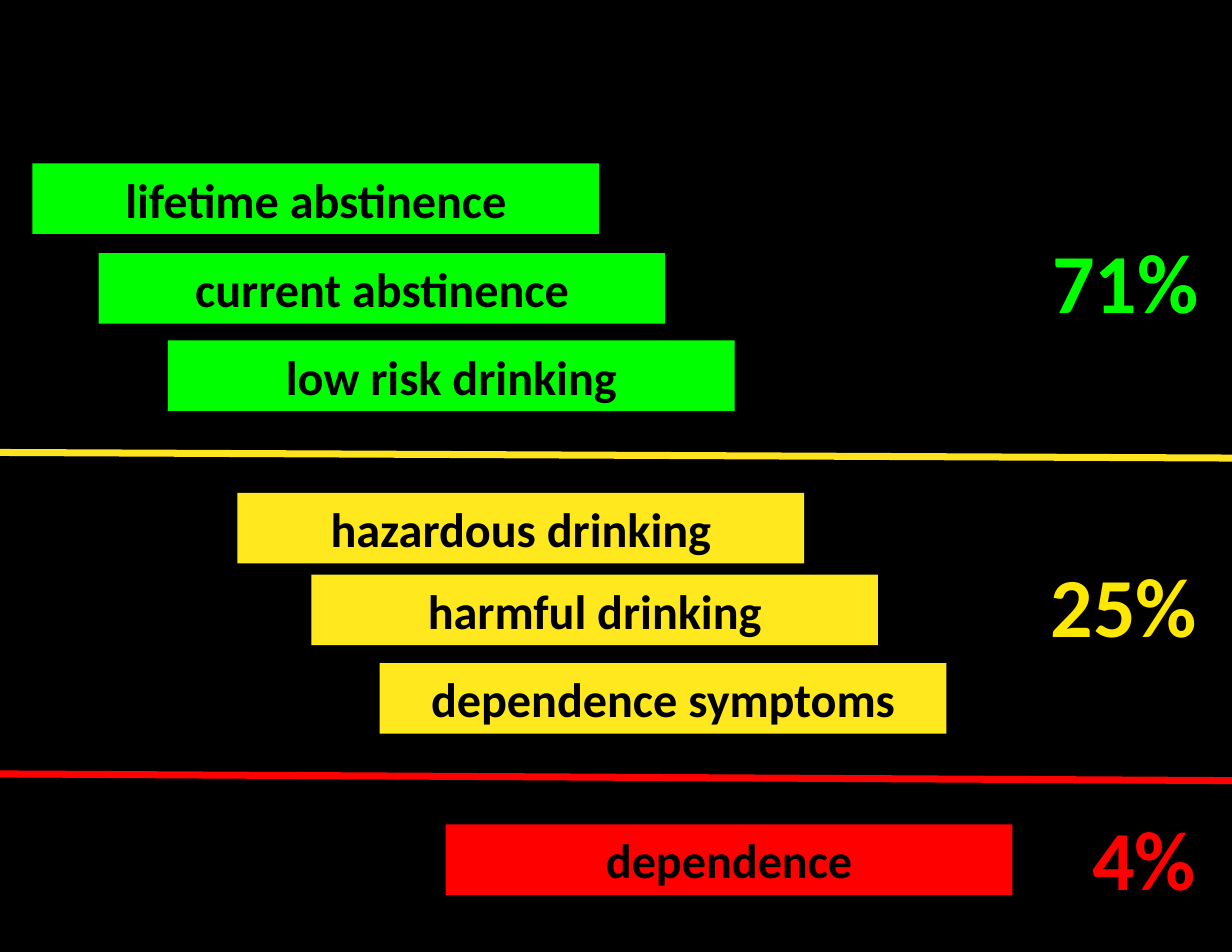
from lxml import etree
from pptx import Presentation
from pptx.dml.color import RGBColor
from pptx.enum import shapes, text
from pptx.oxml.ns import qn
from pptx.util import Inches, Pt

COLORS = {
    "background": "000000",
    "green": "00FF00",
    "yellow": "FFE81E",
    "yellow_line": "FEE31E",
    "yellow_share": "FFE800",
    "red": "FF0000",
}
LEVELS = [
    ("lifetime abstinence", 0.29, 1.46, "green"),
    ("current abstinence", 0.88, 2.26, "green"),
    ("low risk drinking", 1.5, 3.04, "green"),
    ("hazardous drinking", 2.12, 4.4, "yellow"),
    ("harmful drinking", 2.78, 5.13, "yellow"),
    ("dependence symptoms", 3.39, 5.92, "yellow"),
    ("dependence", 3.98, 7.36, "red"),
]
SHARES = [
    ("71%", 9.1, 1.99, "green"),
    ("25%", 9.09, 4.88, "yellow_share"),
    ("4%", 9.08, 7.14, "red"),
]
DIVIDERS = [(4.04, 4.09, "yellow_line"), (6.91, 6.97, "red")]
SLIDE_WIDTH, SLIDE_HEIGHT = 11, 8.5
BAR_SIZE = (5.06, 0.63)
SHARE_SIZE = (1.71, 1.02)


def color(name):
    return RGBColor.from_string(COLORS[name])


def write_text(shape, content, size, color_name, align, anchor):
    frame = shape.text_frame
    frame.word_wrap = True
    frame.vertical_anchor = anchor
    frame.margin_left = frame.margin_right = Inches(0.11)
    frame.margin_top = frame.margin_bottom = Inches(0.06)
    paragraph = frame.paragraphs[0]
    paragraph.alignment = align
    run = paragraph.add_run()
    run.text = content
    run.font.name = "Calibri"
    run.font.size = Pt(size)
    run.font.bold = True
    run.font.color.rgb = color(color_name)


def add_level(slide, label, left, top, fill):
    bar = slide.shapes.add_shape(
        shapes.MSO_SHAPE.RECTANGLE, *map(Inches, (left, top, *BAR_SIZE)))
    bar.shadow.inherit = False
    bar.fill.solid()
    bar.fill.fore_color.rgb = color(fill)
    bar.line.fill.background()
    write_text(bar, label, size=31, color_name="background",
               align=text.PP_ALIGN.CENTER, anchor=text.MSO_ANCHOR.MIDDLE)


def add_share(slide, label, left, top, color_name):
    box = slide.shapes.add_textbox(*map(Inches, (left, top, *SHARE_SIZE)))
    write_text(box, label, size=54, color_name=color_name,
               align=text.PP_ALIGN.RIGHT, anchor=text.MSO_ANCHOR.TOP)


def add_divider(slide, start, end, color_name):
    line = slide.shapes.add_connector(
        shapes.MSO_CONNECTOR.STRAIGHT,
        *map(Inches, (0, start, SLIDE_WIDTH, end)))
    line.line.color.rgb = color(color_name)
    line.line.width = Pt(4.5)
    etree.SubElement(line._element.spPr, qn("a:effectLst"))


def main():
    presentation = Presentation()
    presentation.slide_width = Inches(SLIDE_WIDTH)
    presentation.slide_height = Inches(SLIDE_HEIGHT)
    slide = presentation.slides.add_slide(presentation.slide_layouts[6])
    slide.background.fill.solid()
    slide.background.fill.fore_color.rgb = color("background")
    for level in LEVELS:
        add_level(slide, *level)
    for divider in DIVIDERS:
        add_divider(slide, *divider)
    for share in SHARES:
        add_share(slide, *share)
    presentation.save("out.pptx")


if __name__ == "__main__":
    main()
